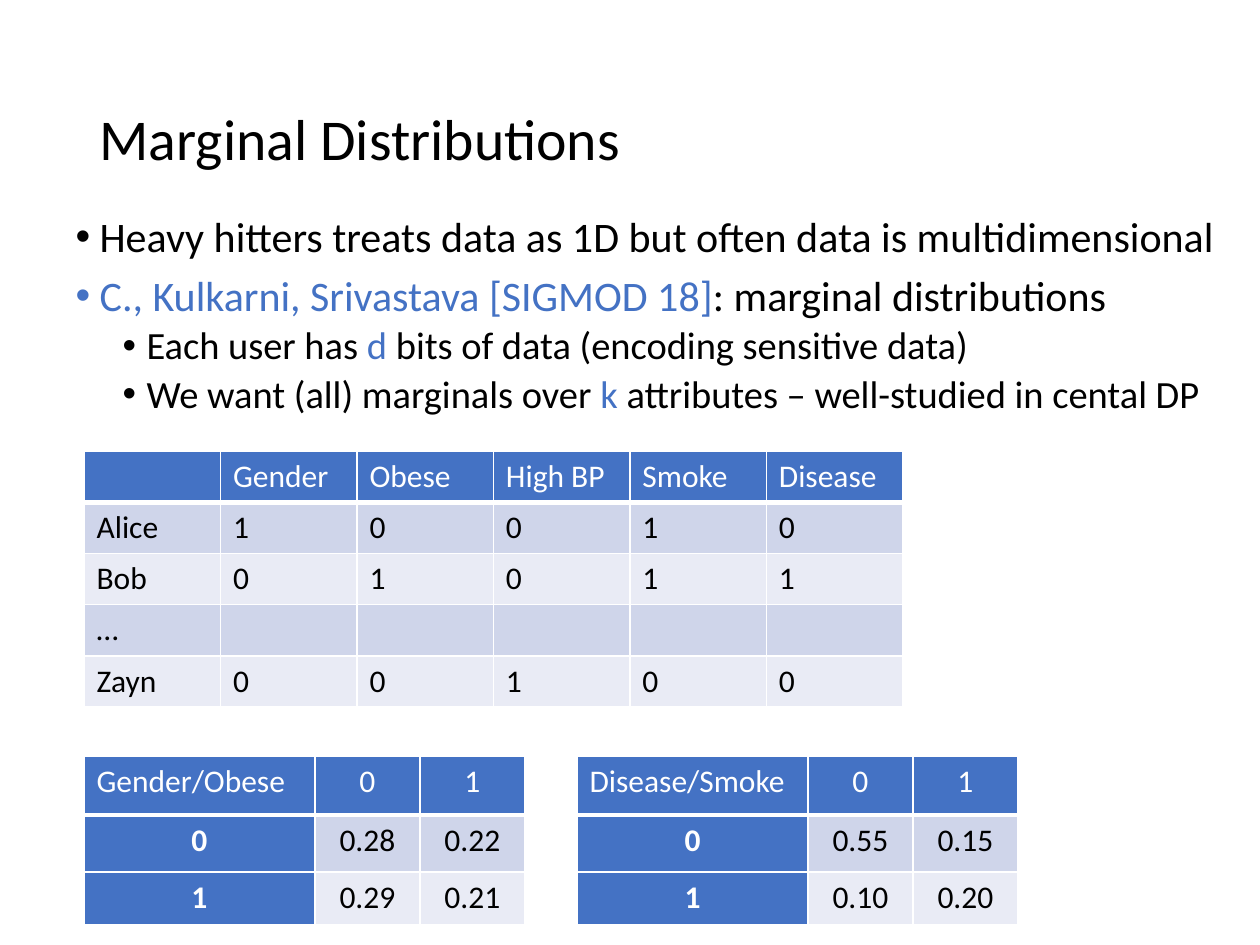
"""Build the slide on marginal distributions with three data tables."""
import lxml.etree
import pptx
import pptx.dml.color
import pptx.enum.text
import pptx.oxml.ns
import pptx.util

TITLE = "Marginal Distributions"
BULLETS = [
    (0, [("Heavy hitters treats data as 1D but often data is multidimensional", "text")]),
    (0, [("C., Kulkarni, Srivastava [SIGMOD 18]", "accent"), (": marginal distributions", "text")]),
    (1, [("Each user has ", "text"), ("d", "accent"),
         (" bits of data (encoding sensitive data)", "text")]),
    (1, [("We want (all) marginals over ", "text"), ("k", "accent"),
         (" attributes – well-studied in cental DP", "text")]),
]
PEOPLE = [
    ["", "Gender", "Obese", "High BP", "Smoke", "Disease"],
    ["Alice", "1", "0", "0", "1", "0"],
    ["Bob", "0", "1", "0", "1", "1"],
    ["…", "", "", "", "", ""],
    ["Zayn", "0", "0", "1", "0", "0"],
]
DISEASE_SMOKE = [["Disease/Smoke", "0", "1"], ["0", "0.55", "0.15"], ["1", "0.10", "0.20"]]
GENDER_OBESE = [["Gender/Obese", "0", "1"], ["0", "0.28", "0.22"], ["1", "0.29", "0.21"]]

THEME = {
    "font": "Calibri", "title": 33, "levels": [24, 22], "table": 18,
    "text": "000000", "accent": "4472C4", "white": "FFFFFF", "bands": ["CFD5EA", "E9EBF5"],
}
PX_PER_INCH = 126
TITLE_BOX = (87, 50, 1086, 183)
BODY_BOX = (63, 210, 1295, 599)
LEVEL_INDENTS = [24, 71]
LEVEL_SPACING = [7.5, 3.8]
HANGING = 24
PEOPLE_SIZE = (819, 256)
MARGINAL_COLUMNS = [231, 105, 105]
MARGINAL_ROWS = [59, 57, 53]
LEFT, PEOPLE_TOP, MARGINAL_TOP, SECOND_LEFT = 84, 451, 756, 577
ALIGN = pptx.enum.text.PP_ALIGN


def px(length):
    return pptx.util.Emu(round(length * 914400 / PX_PER_INCH))


def rgb(color):
    return pptx.dml.color.RGBColor.from_string(THEME[color] if color in THEME else color)


def apply(target, values):
    for name, value in values.items():
        setattr(target, name, value)


def add_span(para, text, size, color, bold=False):
    span = para.add_run()
    span.text = text
    apply(span.font, {"name": THEME["font"], "size": pptx.util.Pt(size), "bold": bold})
    span.font.color.rgb = rgb(color)


def place(shape, bounds):
    apply(shape, dict(zip(("left", "top", "width", "height"), map(px, bounds))))


def child(parent, tag, **attributes):
    return lxml.etree.SubElement(parent, pptx.oxml.ns.qn(tag), attributes)


def add_title(page):
    box = page.shapes.title
    place(box, TITLE_BOX)
    apply(box.text_frame, {"vertical_anchor": pptx.enum.text.MSO_ANCHOR.MIDDLE, "word_wrap": True,
                           "auto_size": pptx.enum.text.MSO_AUTO_SIZE.NONE})
    para = box.text_frame.paragraphs[0]
    apply(para, {"alignment": ALIGN.LEFT, "line_spacing": 0.9})
    add_span(para, TITLE, THEME["title"], "text")


def add_bullets(page):
    box = page.placeholders[1]
    place(box, BODY_BOX)
    frame = box.text_frame
    apply(frame, {"word_wrap": True, "auto_size": pptx.enum.text.MSO_AUTO_SIZE.NONE})
    for index, (level, spans) in enumerate(BULLETS):
        para = frame.add_paragraph() if index else frame.paragraphs[0]
        properties = para._p.get_or_add_pPr()
        properties.set("marL", str(px(LEVEL_INDENTS[level])))
        properties.set("indent", str(-px(HANGING)))
        child(properties, "a:buFont", typeface="Arial")
        child(properties, "a:buChar", char="•")
        space = LEVEL_SPACING[level] if index else 0
        apply(para, {"level": level, "line_spacing": 0.9, "space_before": pptx.util.Pt(space)})
        for text, color in spans:
            add_span(para, text, THEME["levels"][level], color)


def draw_borders(cell, header):
    properties = cell._tc.get_or_add_tcPr()
    widths = {"a:lnL": 1, "a:lnR": 1, "a:lnT": 1, "a:lnB": 3 if header else 1}
    for tag, width in widths.items():
        line = child(properties, tag, w=str(pptx.util.Pt(width)))
        child(child(line, "a:solidFill"), "a:srgbClr", val=THEME["white"])


def add_table(page, data, left, top, columns, rows, marginal=False):
    bounds = map(px, (left, top, sum(columns), sum(rows)))
    table = page.shapes.add_table(len(rows), len(columns), *bounds).table
    table.first_col = marginal
    for column, width in zip(table.columns, columns):
        column.width = px(width)
    for row, height in zip(table.rows, rows):
        row.height = px(height)
    for r, values in enumerate(data):
        for c, text in enumerate(values):
            cell = table.cell(r, c)
            draw_borders(cell, r == 0)
            side = marginal and c == 0 and r > 0
            strong = r == 0 or side
            cell.fill.solid()
            cell.fill.fore_color.rgb = rgb("accent" if strong else THEME["bands"][(r - 1) % 2])
            para = cell.text_frame.paragraphs[0]
            para.alignment = ALIGN.CENTER if marginal and (r or c) else ALIGN.LEFT
            if text:
                add_span(para, text, THEME["table"], "white" if strong else "text", side)


def main():
    deck = pptx.Presentation()
    apply(deck, {"slide_width": px(1260), "slide_height": px(945)})
    page = deck.slides.add_slide(deck.slide_layouts[1])
    add_title(page)
    add_bullets(page)
    width, height = PEOPLE_SIZE
    columns = [width / len(PEOPLE[0])] * len(PEOPLE[0])
    rows = [height / len(PEOPLE)] * len(PEOPLE)
    add_table(page, PEOPLE, LEFT, PEOPLE_TOP, columns, rows)
    for data, left in ((DISEASE_SMOKE, SECOND_LEFT), (GENDER_OBESE, LEFT)):
        add_table(page, data, left, MARGINAL_TOP, MARGINAL_COLUMNS, MARGINAL_ROWS, marginal=True)
    deck.save("out.pptx")


if __name__ == "__main__":
    main()
